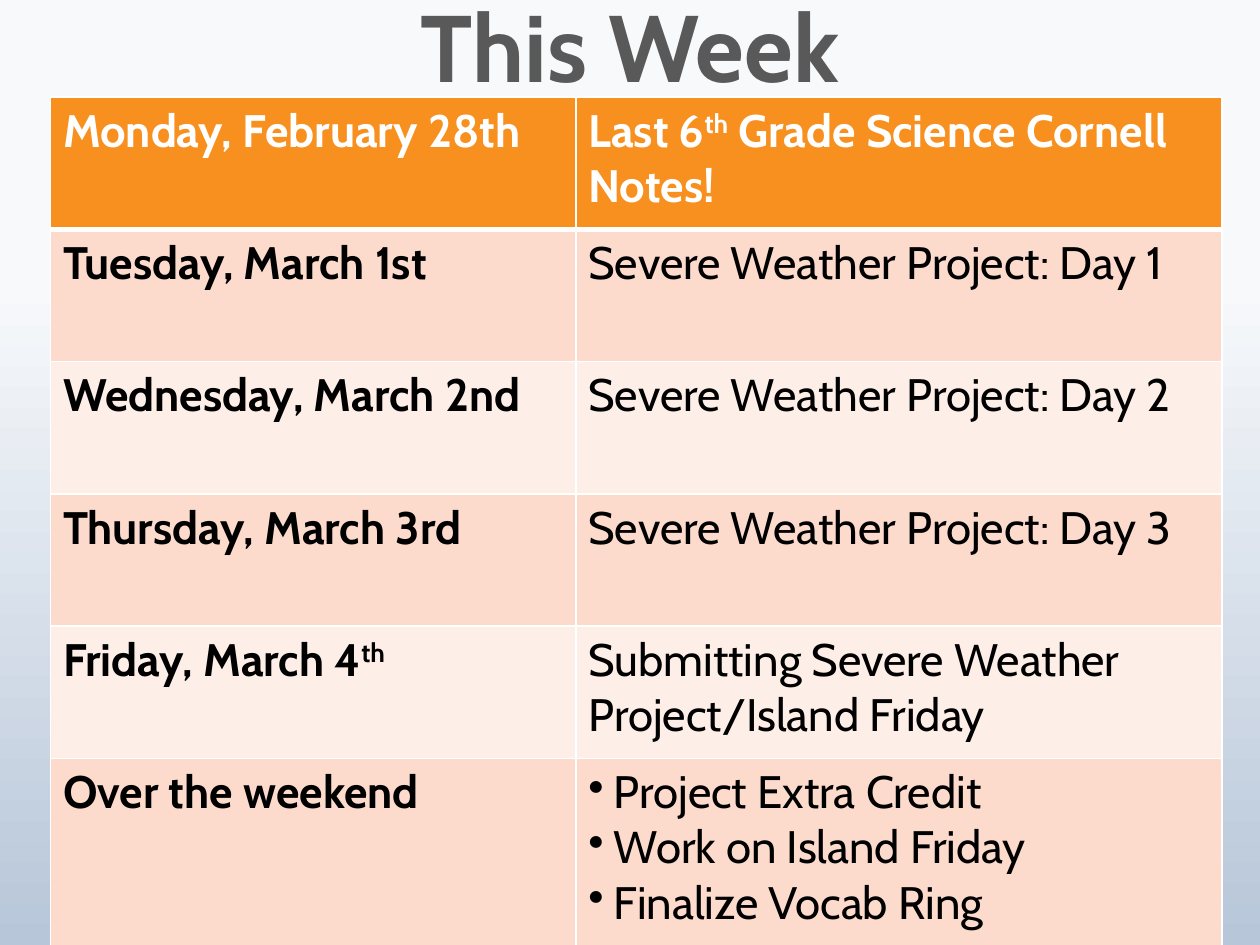
from lxml import etree
from pptx import Presentation
from pptx.dml.color import RGBColor
from pptx.enum.text import MSO_ANCHOR, PP_ALIGN
from pptx.oxml.ns import qn
from pptx.util import Inches, Pt

CENTER = PP_ALIGN.CENTER
MIDDLE = MSO_ANCHOR.MIDDLE
TITLE_ONLY = 5

WHITE = RGBColor(0xFF, 0xFF, 0xFF)
BLACK = RGBColor(0, 0, 0)
GRAY = RGBColor(0x59, 0x59, 0x59)
ORANGE = RGBColor(0xF7, 0x90, 0x1E)
PEACH = RGBColor(0xFC, 0xDB, 0xCD)
PALE_PEACH = RGBColor(0xFD, 0xEE, 0xE8)
SKY_TOP = RGBColor(0xF7, 0xF9, 0xFB)
SKY_BOTTOM = RGBColor(0xB7, 0xC6, 0xD9)

FONT = "Cabin"
COLUMN_WIDTHS = [4.17, 5.13]
ROW_HEIGHTS = [1.05] * 5 + [1.52]

# Each cell is a list of paragraphs, and each paragraph a list of (text, raised) spans.
SCHEDULE = [
    ([[("Monday, February 28th", False)]],
     [[("Last 6", False), ("th", True), (" Grade Science Cornell Notes!", False)]]),
    ([[("Tuesday, March 1st", False)]], [[("Severe Weather Project: Day 1", False)]]),
    ([[("Wednesday, March 2nd", False)]], [[("Severe Weather Project: Day 2", False)]]),
    ([[("Thursday, March 3rd", False)]], [[("Severe Weather Project: Day 3", False)]]),
    ([[("Friday, March 4", False), ("th", True)]],
     [[("Submitting Severe Weather Project/Island Friday", False)]]),
    ([[("Over the weekend", False)]],
     [[("Project Extra Credit", False)],
      [("Work on Island Friday", False)],
      [("Finalize Vocab Ring", False)]]),
]


def add_span(para, text, size=26, color=BLACK, bold=False, raised=False):
    """Add a formatted span of text to a paragraph."""
    span = para.add_run()
    span.text = text
    span.font.name = FONT
    span.font.size = Pt(size)
    span.font.bold = bold
    span.font.color.rgb = color
    if raised:
        span._r.get_or_add_rPr().set("baseline", "30000")


def add_bullet(para):
    """Give a paragraph a round bullet with a hanging indent."""
    properties = para._p.get_or_add_pPr()
    properties.set("marL", str(Inches(0.2)))
    properties.set("indent", str(-Inches(0.2)))
    etree.SubElement(properties, qn("a:buChar")).set("char", "•")


def set_borders(cell, bottom_width):
    """Draw white borders around a cell."""
    properties = cell._tc.get_or_add_tcPr()
    widths = {"a:lnL": 1, "a:lnR": 1, "a:lnT": 1, "a:lnB": bottom_width}
    for position, (side, width) in enumerate(widths.items()):
        line = etree.Element(qn(side), w=str(Pt(width)))
        fill = etree.SubElement(line, qn("a:solidFill"))
        etree.SubElement(fill, qn("a:srgbClr")).set("val", str(WHITE))
        properties.insert(position, line)


def fill_background(page):
    """Fill the page with a gradient that runs from top to bottom."""
    fill = page.background.fill
    fill.gradient()
    fill.gradient_angle = 270
    for stop, color, position in zip(fill.gradient_stops, (SKY_TOP, SKY_BOTTOM), (0.3, 1)):
        stop.color.rgb = color
        stop.position = position


def place_title(page, left, top, width, height):
    """Place and format the title of the page."""
    box = page.shapes.title
    box.left, box.top, box.width, box.height = left, top, width, height
    box.text_frame.vertical_anchor = MIDDLE
    para = box.text_frame.paragraphs[0]
    para.alignment = CENTER
    para.line_spacing = Pt(56)
    add_span(para, "This Week", size=54, color=GRAY, bold=True)


def fill_cell(cell, paragraphs, row, column):
    """Write one schedule cell and style it by its row and column."""
    header = row == 0
    cell.fill.solid()
    cell.fill.fore_color.rgb = ORANGE if header else PEACH if row % 2 else PALE_PEACH
    set_borders(cell, 3 if header else 1)
    frame = cell.text_frame
    for number, spans in enumerate(paragraphs):
        para = frame.add_paragraph() if number else frame.paragraphs[0]
        if len(paragraphs) > 1:
            add_bullet(para)
        for text, raised in spans:
            add_span(para, text, color=WHITE if header else BLACK,
                     bold=header or column == 0, raised=raised)


def place_schedule(page, left, top, width, height):
    """Place the table of the week's days and tasks."""
    table = page.shapes.add_table(
        len(ROW_HEIGHTS), len(COLUMN_WIDTHS), left, top, width, height).table
    for column, size in zip(table.columns, COLUMN_WIDTHS):
        column.width = Inches(size)
    for row, size in zip(table.rows, ROW_HEIGHTS):
        row.height = Inches(size)
    for row, entries in enumerate(SCHEDULE):
        for column, paragraphs in enumerate(entries):
            fill_cell(table.cell(row, column), paragraphs, row, column)


def main():
    """Build the weekly schedule slide."""
    deck = Presentation()
    deck.slide_width, deck.slide_height = Inches(10), Inches(7.5)
    page = deck.slides.add_slide(deck.slide_layouts[TITLE_ONLY])
    fill_background(page)
    place_title(page, Inches(1), Inches(-0.27), Inches(8), Inches(1.38))
    place_schedule(page, Inches(0.4), Inches(0.77), Inches(9.3), Inches(6.78))
    deck.save("out.pptx")


if __name__ == "__main__":
    main()
